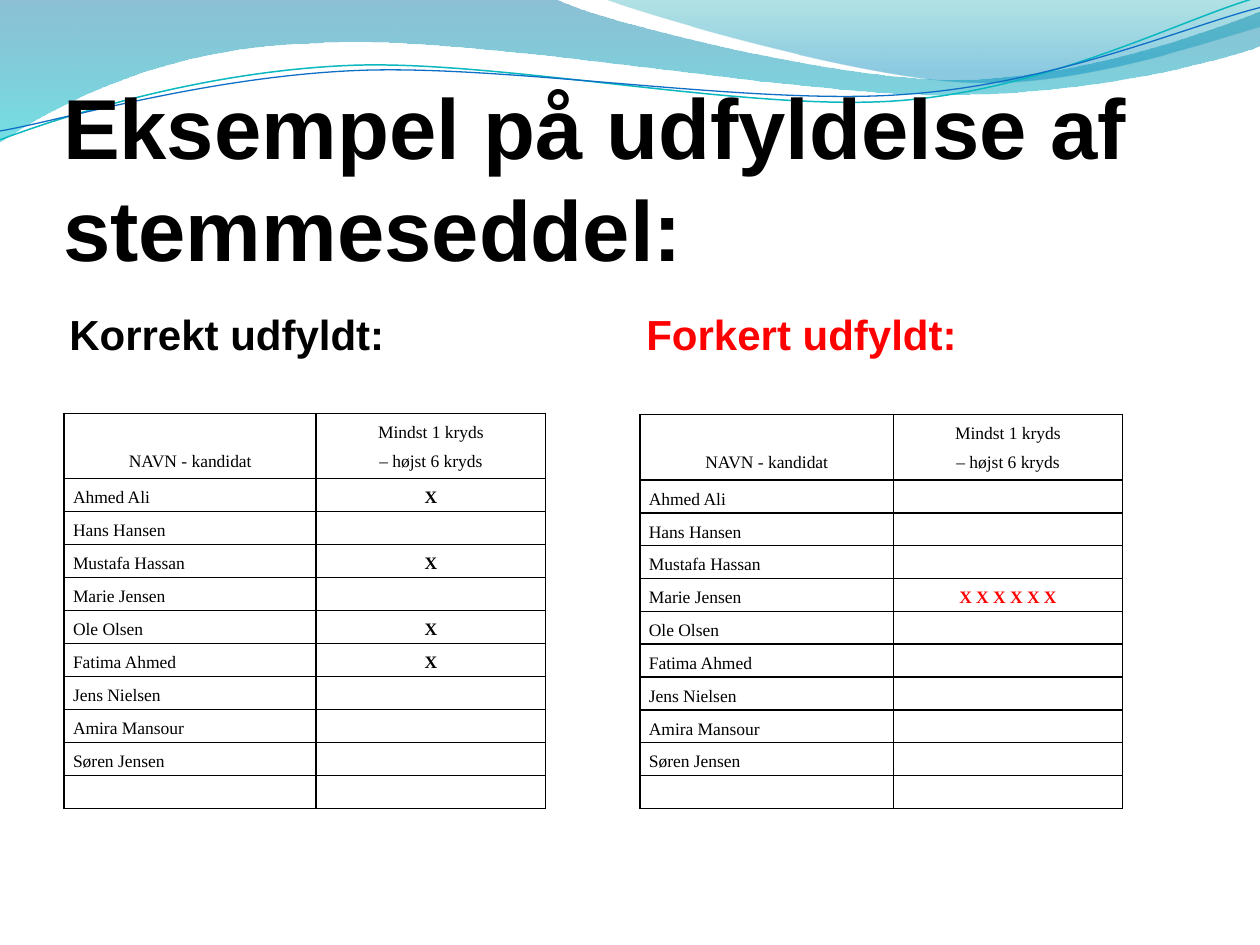
from lxml.etree import SubElement
from pptx import Presentation
from pptx.dml.color import RGBColor
from pptx.enum.text import MSO_ANCHOR, MSO_AUTO_SIZE, PP_ALIGN
from pptx.oxml.ns import qn
from pptx.util import Inches, Pt

CANDIDATES = ["Ahmed Ali", "Hans Hansen", "Mustafa Hassan", "Marie Jensen", "Ole Olsen",
              "Fatima Ahmed", "Jens Nielsen", "Amira Mansour", "Søren Jensen", ""]


def colour(value):
    return RGBColor.from_string(value)


class BallotSlide:
    heading_font = "Arial"
    table_font = "Times New Roman"
    black, red = "000000", "FF0000"

    def __init__(self, deck):
        self.page = deck.slides.add_slide(deck.slide_layouts[4])

    def outline(self, start, segments, close):
        """Segments hold one point for a line, three for a Bézier curve."""
        builder = self.page.shapes.build_freeform(*map(Inches, start))
        spots = [(Inches(x), Inches(y)) for segment in segments
                 for x, y in zip(segment[::2], segment[1::2])]
        builder.add_line_segments(spots, close=close)
        shape = builder.convert_to_shape()
        shape.shadow.inherit = False
        # Join each run of three control points into one curve
        lines = iter(list(shape._element.iter(qn("a:lnTo"))))
        for segment in segments:
            first = next(lines)
            if len(segment) == 6:
                first.tag = qn("a:cubicBezTo")
                for extra in (next(lines), next(lines)):
                    first.append(extra[0])
                    extra.getparent().remove(extra)
        return shape

    def wave(self, start, segments, stops):
        shape = self.outline(start, segments, True)
        shape.line.fill.background()
        shape.fill.gradient()
        shape.fill.gradient_angle = 270
        for stop, (position, value, _) in zip(shape.fill.gradient_stops, stops):
            stop.position = position
            stop.color.rgb = colour(value)
        for node, (_, _, alpha) in zip(shape._element.iter(qn("a:srgbClr")), stops):
            SubElement(node, qn("a:alpha"), val=str(alpha * 1000))

    def ripple(self, start, segments, value, width):
        shape = self.outline(start, segments, False)
        shape.fill.background()
        shape.line.color.rgb = colour(value)
        shape.line.width = Pt(width)

    def style(self, para, font, size, value, bold=False):
        para.font.name, para.font.size, para.font.bold = font, Pt(size), bold
        para.font.color.rgb = colour(value)

    def heading(self, index, text, place, size, value, side, bottom):
        box = self.page.placeholders[index]
        box.left, box.top, box.width, box.height = map(Inches, place)
        self.page.shapes._spTree.append(box._element)  # in front of the waves
        frame = box.text_frame
        frame.text = text
        frame.word_wrap = True
        frame.auto_size = MSO_AUTO_SIZE.NONE
        frame.vertical_anchor = MSO_ANCHOR.BOTTOM
        frame.margin_left = frame.margin_right = Inches(side)
        frame.margin_top, frame.margin_bottom = 0, Inches(bottom)
        para = frame.paragraphs[0]
        para.alignment = PP_ALIGN.LEFT
        self.style(para, self.heading_font, size, value, True)
        return para

    def cell(self, cell, text, centred=False, value=black, bold=False):
        cell.fill.background()
        cell.margin_left = cell.margin_right = Inches(0.07)
        cell.margin_top = cell.margin_bottom = 0
        cell.text = text
        for para in cell.text_frame.paragraphs:
            para.alignment = PP_ALIGN.CENTER if centred else PP_ALIGN.LEFT
            para.line_spacing = 1.5
            self.style(para, self.table_font, 10, value, bold)
            if not text:
                SubElement(para._p, qn("a:endParaRPr"), sz="1000")
        properties = cell._tc.get_or_add_tcPr()
        for place, side in enumerate(("a:lnL", "a:lnR", "a:lnT", "a:lnB")):
            line = SubElement(properties, qn(side), w=str(Pt(1)))
            fill = SubElement(line, qn("a:solidFill"))
            SubElement(fill, qn("a:srgbClr"), val=self.black)
            properties.insert(place, line)

    def ballot(self, left, top, widths, height, marks, value):
        frame = self.page.shapes.add_table(
            len(CANDIDATES) + 1, 2, Inches(left), Inches(top),
            Inches(sum(widths)), Inches(height))
        table = frame.table
        table.first_row = table.horz_banding = False
        for column, width in zip(table.columns, widths):
            column.width = Inches(width)
        header = 0.52
        for number, row in enumerate(table.rows):
            row.height = Inches((height - header) / len(CANDIDATES) if number else header)
        name_cell = table.cell(0, 0)
        self.cell(name_cell, "NAVN - kandidat", True)
        name_cell.vertical_anchor = MSO_ANCHOR.BOTTOM
        name_cell.margin_bottom = Inches(0.06)
        self.cell(table.cell(0, 1), "Mindst 1 kryds\n– højst 6 kryds", True)
        for number, name in enumerate(CANDIDATES, 1):
            self.cell(table.cell(number, 0), name)
            self.cell(table.cell(number, 1), marks.get(name, ""), True, value, True)


def main():
    deck = Presentation()
    deck.slide_width, deck.slide_height = Inches(10), Inches(7.5)
    slide = BallotSlide(deck)
    for index in (2, 4):  # unused content placeholders
        unused = slide.page.placeholders[index]._element
        unused.getparent().remove(unused)

    # Waves along the top
    slide.wave((0, 0), [(4.4, -0.01), (4.76, 0.17, 6.64, 0.63, 7.58, 0.63),
                        (8.53, 0.63, 9.58, 0.26, 10, 0.09), (10.01, 0.36),
                        (9.83, 0.44, 8.7, 0.76, 7.46, 0.75),
                        (6.22, 0.75, 3.82, 0.28, 2.57, 0.34),
                        (1.29, 0.36, 0.46, 0.83, -0.01, 1.13)],
               [(0, "0074A1", 45), (1, "00C6CF", 55)])
    slide.wave((4.79, -0.01), [(5.09, 0.11, 6.82, 0.62, 7.69, 0.65),
                               (8.56, 0.69, 9.61, 0.32, 10, 0.21), (10, 0)],
               [(0, "00A1A9", 30), (0.8, "008BBF", 45)])
    slide.ripple((0, 1.11), [(0.48, 0.93, 1.58, 0.57, 2.77, 0.52),
                             (3.95, 0.47, 5.93, 0.89, 7.13, 0.8),
                             (8.33, 0.71, 9.38, 0.15, 9.98, -0.02)], "0AB8BF", 0.85)
    slide.ripple((0, 1.04), [(0.47, 0.96, 1.64, 0.61, 2.83, 0.56),
                             (4.03, 0.51, 5.97, 0.84, 7.17, 0.75),
                             (8.36, 0.67, 9.41, 0.21, 10, 0.06)], "0F6FC6", 0.75)

    # Title and column headings
    title = slide.heading(0, "Eksempel på udfyldelse af stemmeseddel:",
                          (0.5, 0.77, 9, 2.19), 48.6, slide.black, 0, 0.75)
    title.line_spacing = Pt(58.3)
    for index, text, left, value in ((1, "Korrekt udfyldt:", 0.5, slide.black),
                                     (3, "Forkert udfyldt:", 5.08, slide.red)):
        slide.heading(index, text, (left, 2.65, 4.42, 0.39), 24, value, 0.05, 0.19)

    # Ballots: one filled in correctly, one wrongly
    voted = ("Ahmed Ali", "Mustafa Hassan", "Ole Olsen", "Fatima Ahmed")
    slide.ballot(0.51, 3.28, (2, 1.82), 3.14, dict.fromkeys(voted, "X"), slide.black)
    slide.ballot(5.08, 3.29, (2.01, 1.82), 3.13,
                 {"Marie Jensen": "X X X X X X"}, slide.red)

    deck.save("out.pptx")


if __name__ == "__main__":
    main()
